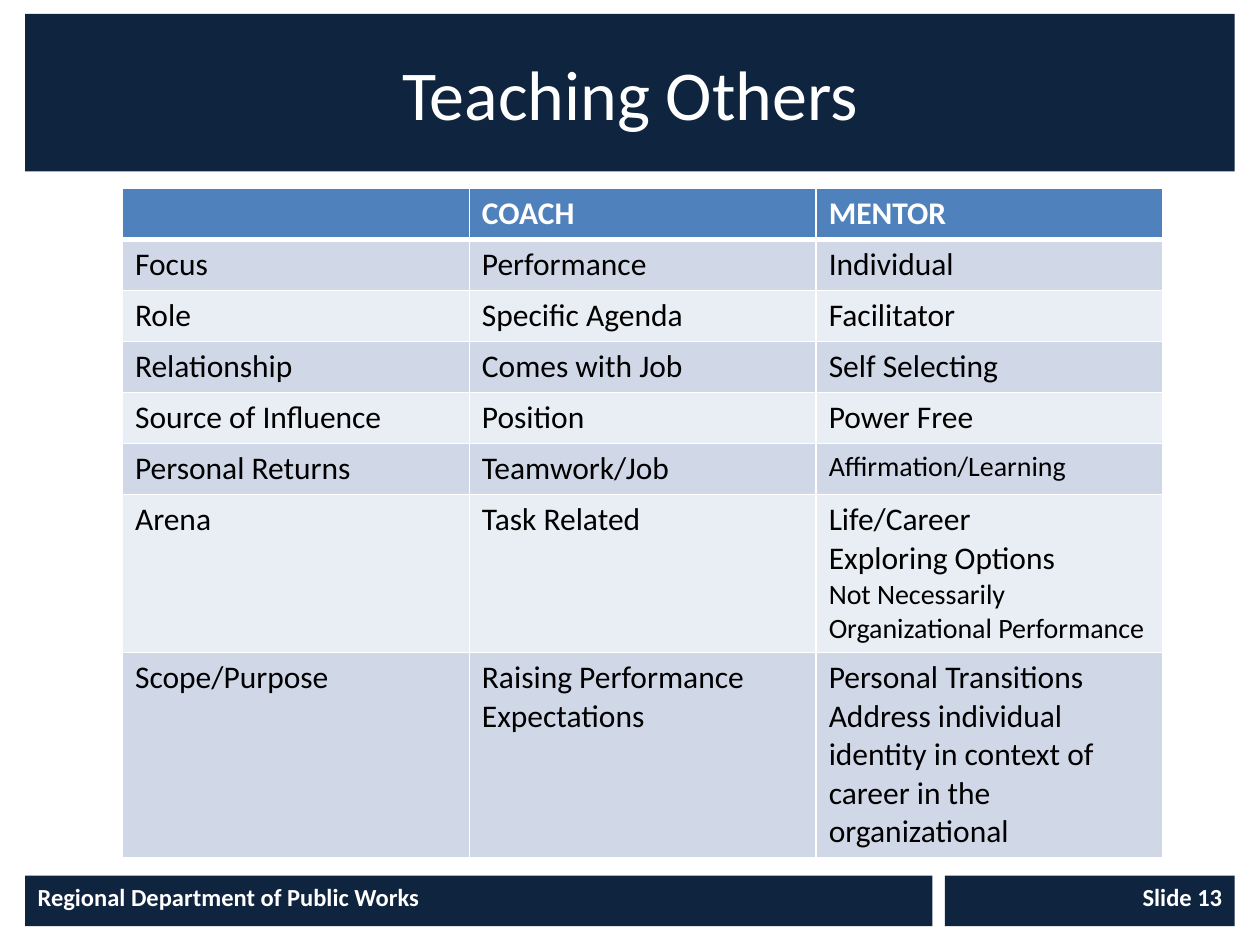
from lxml import etree
from pptx import Presentation
from pptx.dml.color import RGBColor
from pptx.enum.shapes import MSO_SHAPE
from pptx.enum.text import MSO_ANCHOR, PP_ALIGN
from pptx.oxml.ns import qn
from pptx.util import Pt

RECTANGLE = MSO_SHAPE.RECTANGLE
TOP, MIDDLE = MSO_ANCHOR.TOP, MSO_ANCHOR.MIDDLE
LEFT, CENTER, RIGHT = PP_ALIGN.LEFT, PP_ALIGN.CENTER, PP_ALIGN.RIGHT

COLORS = {
    "navy": "0F243E",
    "white": "FFFFFF",
    "black": "000000",
    "header": "4F81BD",
    "odd_row": "D0D8E8",
    "even_row": "E9EDF4",
}
FONT = "Calibri"
BODY_SIZE, SMALL_SIZE = 18, 16
ROW_HEIGHT, ARENA_HEIGHT, SCOPE_HEIGHT = 29.2, 90.3, 116.6
COLUMN_WIDTH = 198.2

ROWS = [
    ["", "COACH", "MENTOR"],
    ["Focus", "Performance", "Individual"],
    ["Role", "Specific Agenda", "Facilitator"],
    ["Relationship", "Comes with Job", "Self Selecting"],
    ["Source of Influence", "Position", "Power Free"],
    ["Personal Returns", "Teamwork/Job", "Affirmation/Learning"],
    ["Arena", "Task Related",
     "Life/Career\nExploring Options\nNot Necessarily Organizational Performance"],
    ["Scope/Purpose", "Raising Performance Expectations",
     "Personal Transitions\n"
     "Address individual identity in context of career in the organizational"],
]
SMALL_LINES = {"Affirmation/Learning", "Not Necessarily Organizational Performance"}


def rgb(name):
    return RGBColor.from_string(COLORS[name])


def write_line(paragraph, text, color, size, bold=False, alignment=LEFT):
    paragraph.alignment = alignment
    run = paragraph.add_run()
    run.text = text
    font_format = {"name": FONT, "size": Pt(size), "bold": bold}
    for attribute, value in font_format.items():
        setattr(run.font, attribute, value)
    run.font.color.rgb = rgb(color)


def add_bar(slide, bounds, text, size, bold, alignment, anchor):
    shape = slide.shapes.add_shape(RECTANGLE, *map(Pt, bounds))
    shape.shadow.inherit = False
    shape.fill.solid()
    shape.fill.fore_color.rgb = rgb("navy")
    shape.line.fill.background()
    frame = shape.text_frame
    frame_format = {"word_wrap": True, "vertical_anchor": anchor}
    for attribute, value in frame_format.items():
        setattr(frame, attribute, value)
    write_line(frame.paragraphs[0], text, "white", size, bold, alignment)


def set_border(cell, side, width):
    properties = cell._tc.get_or_add_tcPr()
    line = etree.SubElement(properties, qn(f"a:ln{side}"), w=str(Pt(width)))
    fill = etree.SubElement(line, qn("a:solidFill"))
    etree.SubElement(fill, qn("a:srgbClr"), val=COLORS["white"])


def fill_cell(cell, text, row_index):
    is_header = row_index == 0
    borders = {
        "L": 1,
        "R": 1,
        "T": 3 if row_index == 1 else 1,
        "B": 3 if is_header else 1,
    }
    for side, width in borders.items():
        set_border(cell, side, width)
    fill_name = "header" if is_header else ("odd_row" if row_index % 2 else "even_row")
    cell.fill.solid()
    cell.fill.fore_color.rgb = rgb(fill_name)
    if not text:
        return
    frame = cell.text_frame
    for line_index, line in enumerate(text.split("\n")):
        paragraph = frame.add_paragraph() if line_index else frame.paragraphs[0]
        size = SMALL_SIZE if line in SMALL_LINES else BODY_SIZE
        write_line(paragraph, line, "white" if is_header else "black", size, is_header)


def add_comparison_table(slide, left, top):
    heights = [ROW_HEIGHT] * (len(ROWS) - 2) + [ARENA_HEIGHT, SCOPE_HEIGHT]
    column_count = len(ROWS[0])
    bounds = (left, top, COLUMN_WIDTH * column_count, sum(heights))
    table = slide.shapes.add_table(len(ROWS), column_count, *map(Pt, bounds)).table
    for column in table.columns:
        column.width = Pt(COLUMN_WIDTH)
    for row_index, (texts, height) in enumerate(zip(ROWS, heights)):
        table.rows[row_index].height = Pt(height)
        for column_index, text in enumerate(texts):
            fill_cell(table.cell(row_index, column_index), text, row_index)


def main():
    presentation = Presentation()
    presentation.slide_width, presentation.slide_height = Pt(720), Pt(540)
    slide = presentation.slides.add_slide(presentation.slide_layouts[6])
    add_bar(slide, (14.4, 500.4, 518.4, 28.8), "Regional Department of Public Works",
            14, True, LEFT, TOP)
    add_bar(slide, (540, 500.4, 165.6, 28.8), "Slide 13", 14, True, RIGHT, TOP)
    add_bar(slide, (14.4, 8, 691.2, 90), "Teaching Others", 40, False, CENTER, MIDDLE)
    add_comparison_table(slide, 70, 107.5)
    presentation.save("out.pptx")


if __name__ == "__main__":
    main()
